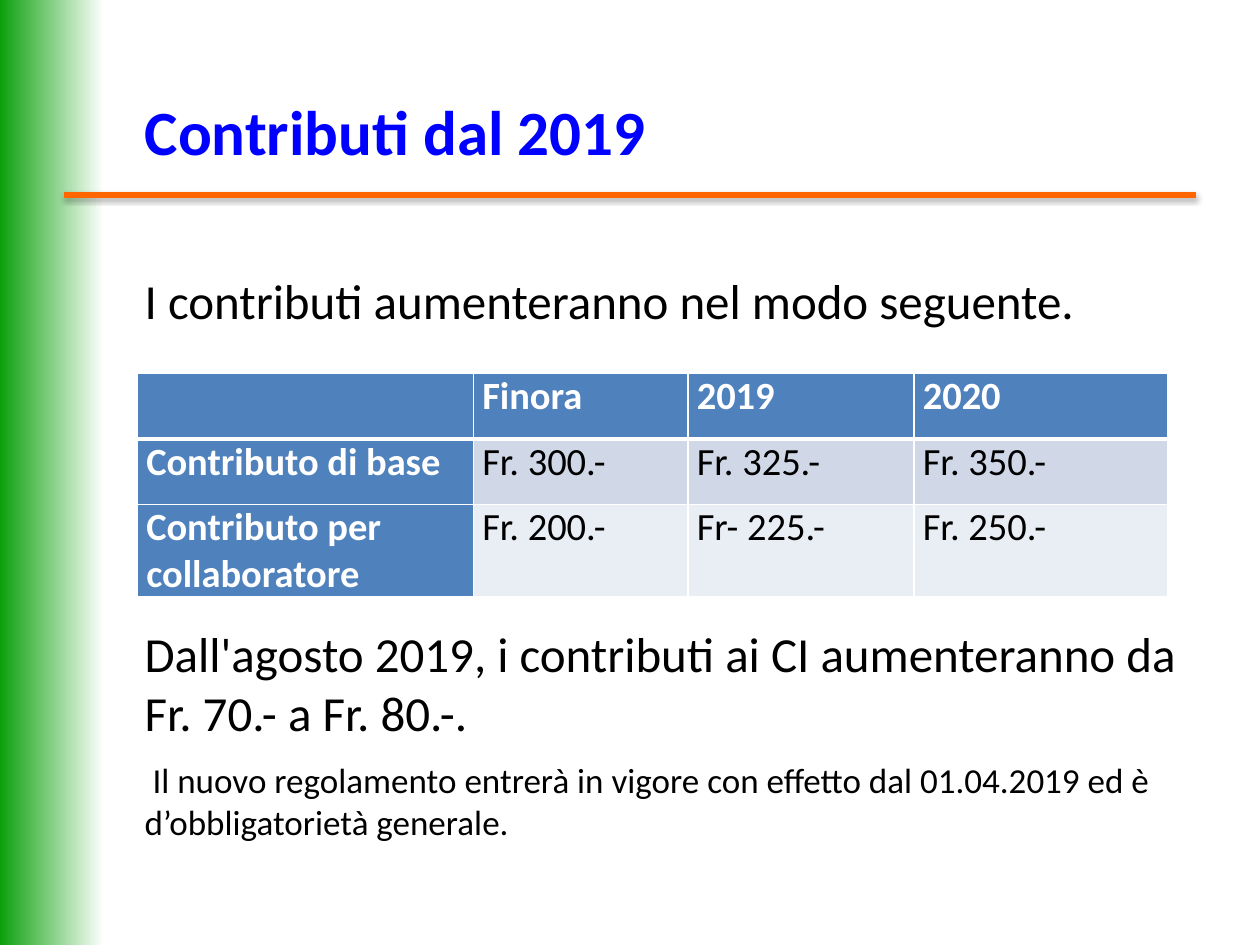
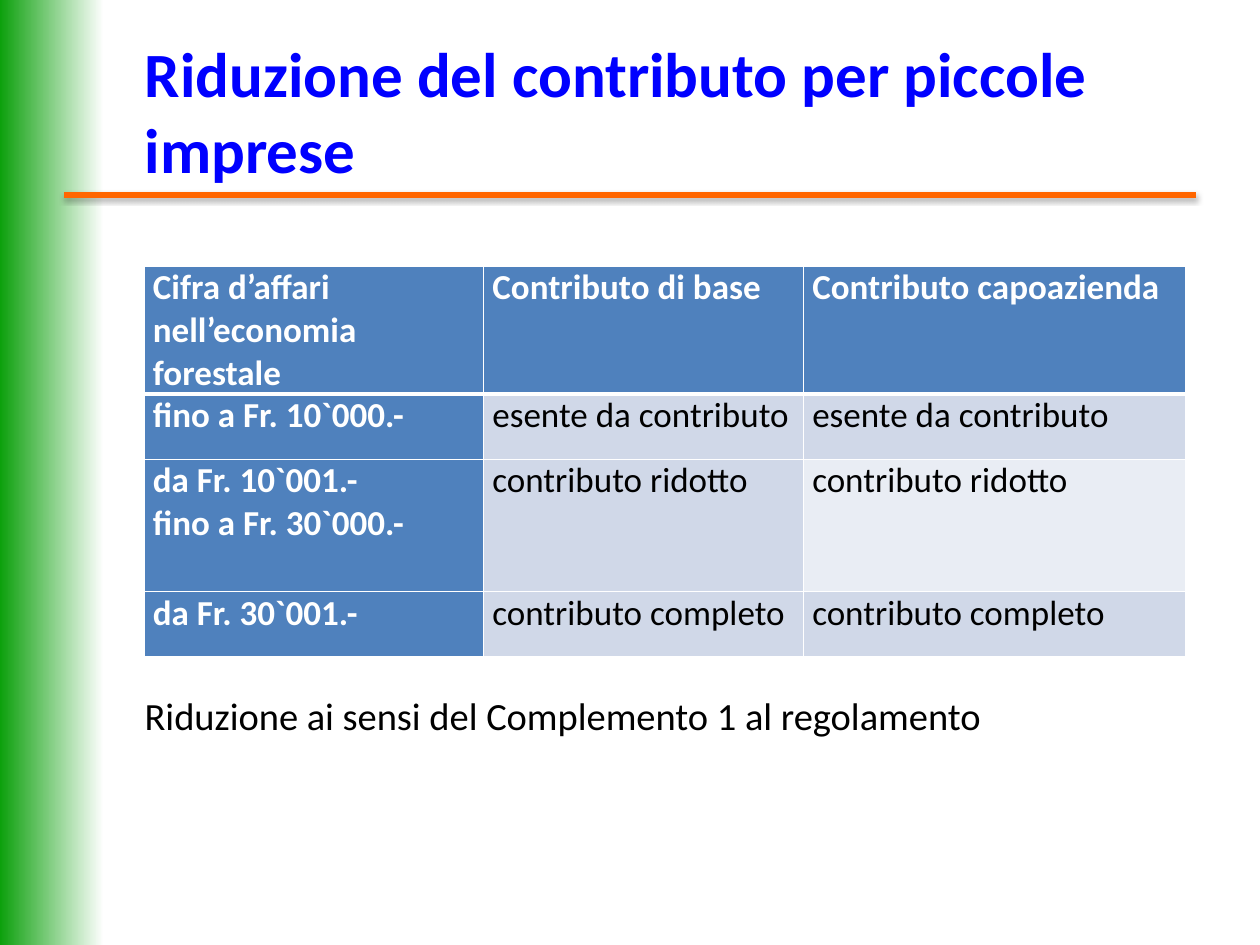
from dataclasses import dataclass

from lxml.etree import SubElement
from pptx import Presentation
from pptx.dml.color import RGBColor
from pptx.enum.shapes import MSO_CONNECTOR, MSO_SHAPE
from pptx.enum.text import MSO_ANCHOR
from pptx.oxml.ns import qn
from pptx.util import Pt


@dataclass(frozen=True)
class Theme:
    font: str = "Calibri"
    blue: str = "0000FF"
    green: str = "009B00"
    orange: str = "FF6600"
    black: str = "000000"
    white: str = "FFFFFF"
    head: str = "4F81BD"
    dark: str = "D0D8E8"
    light: str = "E9EDF4"
    title: int = 36
    body: int = 28
    cell: int = 22
    small: int = 20


class Deck:
    def __init__(self, theme):
        self.theme = theme
        self.show = Presentation()
        self.show.slide_width, self.show.slide_height = Pt(720), Pt(540)
        self.slide = None

    # Frame shared by all slides: band, rule and title
    def page(self, title, top):
        self.slide = self.show.slides.add_slide(self.show.slide_layouts[6])
        self.band()
        self.rule()
        t = self.theme
        box = self.text([title], 75.6, top, 618.5, 62.6, [t.title], t.blue, True)
        box.vertical_anchor = MSO_ANCHOR.MIDDLE

    def band(self):
        band = self.slide.shapes.add_shape(
            MSO_SHAPE.RECTANGLE, Pt(-3), Pt(0), Pt(62.5), Pt(542))
        band.shadow.inherit = False
        band.line.fill.background()
        band.fill.gradient()
        band.fill.gradient_angle = 0
        tints = (self.theme.green, self.theme.white)
        for stop, tint, place in zip(band.fill.gradient_stops, tints, (0, 1)):
            stop.color.rgb = RGBColor.from_string(tint)
            stop.position = place

    def rule(self):
        rule = self.slide.shapes.add_connector(
            MSO_CONNECTOR.STRAIGHT, Pt(36.7), Pt(111.4), Pt(683.3), Pt(111.4))
        rule.line.color.rgb = RGBColor.from_string(self.theme.orange)
        rule.line.width = Pt(3)
        effect = SubElement(rule._element.spPr, qn("a:effectLst"))
        shade = SubElement(effect, qn("a:outerShdw"), blurRad=str(Pt(3.1)),
                           dist=str(Pt(1.6)), dir="5400000", rotWithShape="0")
        tint = SubElement(shade, qn("a:srgbClr"), val=self.theme.black)
        SubElement(tint, qn("a:alpha"), val="38000")

    # Text
    def style(self, para, size, tint, bold=False):
        for run in para.runs:
            font = run.font
            font.name, font.size, font.bold = self.theme.font, Pt(size), bold
            font.color.rgb = RGBColor.from_string(tint)

    def text(self, lines, left, top, width, height, sizes, tint,
             bold=False, gaps=(0,)):
        box = self.slide.shapes.add_textbox(
            Pt(left), Pt(top), Pt(width), Pt(height))
        frame = box.text_frame
        frame.word_wrap = True
        frame.text = "\n".join(lines)
        for para, size, gap in zip(frame.paragraphs, sizes, gaps):
            para.space_before = Pt(gap)
            self.style(para, size, tint, bold)
        return frame

    # Tables
    def edge(self, cell, row):
        widths = {"L": 1, "R": 1, "T": 3 if row == 1 else 1,
                  "B": 3 if row == 0 else 1}
        props = cell._tc.get_or_add_tcPr()
        for side, width in widths.items():
            line = SubElement(props, qn(f"a:ln{side}"), w=str(Pt(width)))
            fill = SubElement(line, qn("a:solidFill"))
            SubElement(fill, qn("a:srgbClr"), val=self.theme.white)

    def table(self, rows, left, top, widths, heights, size, gap, tints):
        t = self.theme
        grid = self.slide.shapes.add_table(
            len(rows), len(widths), Pt(left), Pt(top),
            Pt(sum(widths)), Pt(sum(heights))).table
        for col, width in zip(grid.columns, widths):
            col.width = Pt(width)
        for r, (row, height) in enumerate(zip(rows, heights)):
            grid.rows[r].height = Pt(height)
            for c, words in enumerate(row):
                cell = grid.cell(r, c)
                head = r == 0 or c == 0
                cell.margin_left = cell.margin_right = Pt(5)
                cell.margin_top = cell.margin_bottom = Pt(0)
                self.edge(cell, r)
                cell.fill.solid()
                cell.fill.fore_color.rgb = RGBColor.from_string(
                    t.head if head else tints[r - 1][c - 1])
                para = cell.text_frame.paragraphs[0]
                para.text = words
                para.space_before = para.space_after = Pt(gap)
                self.style(para, size, t.white if head else t.black, head)


def main():
    t = Theme()
    deck = Deck(t)

    # Slide 1: new fees
    deck.page("Contributi dal 2019", 43.2)
    deck.text(
        ["I contributi aumenteranno nel modo seguente.",
         "Dall'agosto 2019, i contributi ai CI aumenteranno da Fr. 70.- a Fr. 80.-.",
         " Il nuovo regolamento entrerà in vigore con effetto dal 01.04.2019 "
         "ed è d’obbligatorietà generale."],
        75.6, 151.2, 630, 318.2, [t.body, t.body, t.small], t.black,
        gaps=(5.6, 168, 10))
    deck.table(
        [["", "Finora", "2019", "2020"],
         ["Contributo di base", "Fr. 300.-", "Fr. 325.-", "Fr. 350.-"],
         ["Contributo per collaboratore", "Fr. 200.-", "Fr- 225.-", "Fr. 250.-"]],
        78.6, 213.4, [192, 122.6, 129.2, 145.2], [37.4, 37.4, 53],
        t.cell, 3, [[t.dark] * 3, [t.light] * 3])

    # Slide 2: lower fees for small firms
    deck.page("Riduzione del contributo per piccole imprese", 31.7)
    deck.table(
        [["Cifra d’affari nell’economia forestale", "Contributo di base",
          "Contributo capoazienda"],
         ["fino a Fr. 10`000.-", "esente da contributo", "esente da contributo"],
         ["da Fr. 10`001.-\vfino a Fr. 30`000.-", "contributo ridotto",
          "contributo ridotto"],
         ["da Fr. 30`001.-", "contributo completo", "contributo completo"]],
        82.4, 152.2, [194, 182.8, 218.2], [73, 37.4, 75.6, 37.4],
        t.small, 4, [[t.dark] * 2, [t.dark, t.light], [t.dark] * 2])
    deck.text(["Riduzione ai sensi del Complemento 1 al regolamento"],
              75.6, 391.7, 522.7, 33.8, [t.cell], t.black)

    deck.show.save("out.pptx")


if __name__ == "__main__":
    main()
